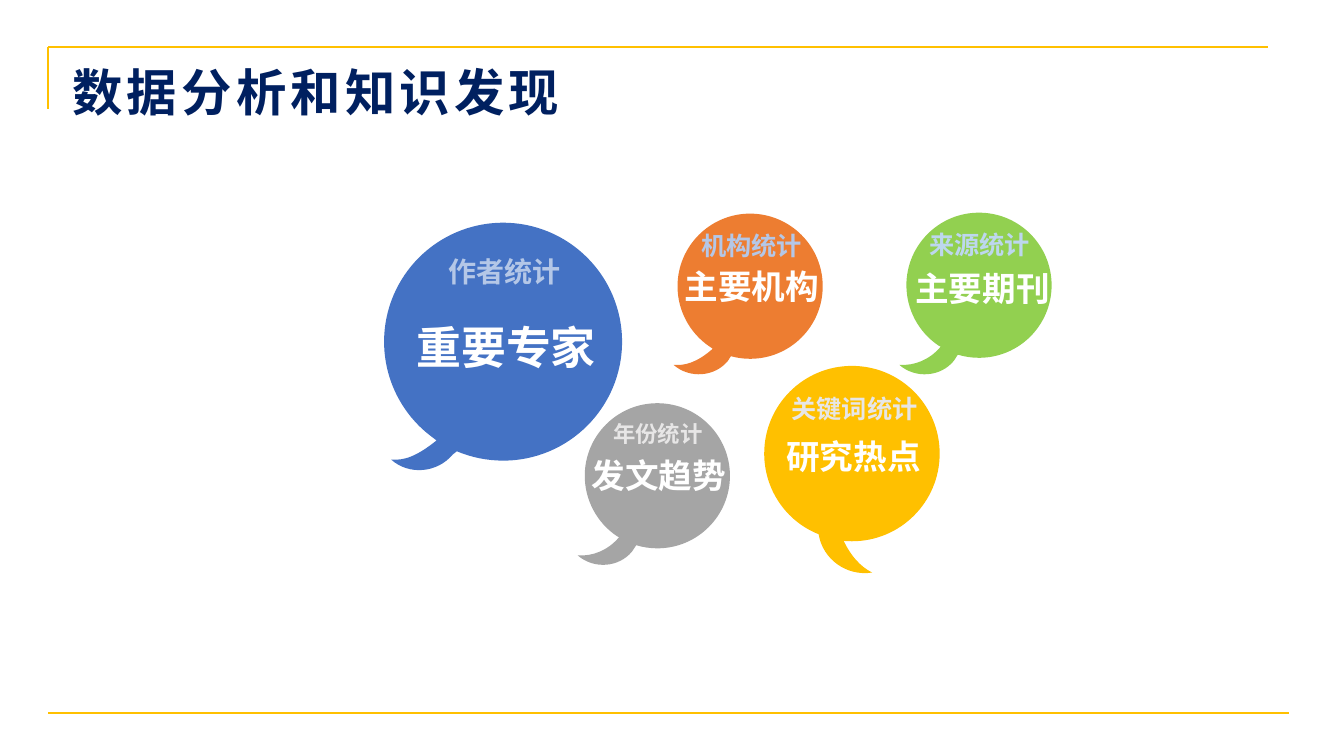
import math
import pptx
import pptx.dml.color
import pptx.enum.shapes
import pptx.enum.text
import pptx.oxml
import pptx.oxml.ns
import pptx.util
import lxml.etree

Inches = pptx.util.Inches
RGB = pptx.dml.color.RGBColor
ALIGN = pptx.enum.text.PP_ALIGN
qn = pptx.oxml.ns.qn

FONT = "Noto Sans CJK SC"
NAVY = RGB(0x00, 0x20, 0x60)
GOLD = RGB(0xFF, 0xC0, 0x00)
BLUE = RGB(0x44, 0x72, 0xC4)
ORANGE = RGB(0xED, 0x7D, 0x31)
GRAY = RGB(0xA5, 0xA5, 0xA5)
GREEN = RGB(0x92, 0xD0, 0x50)
WHITE = RGB(0xFF, 0xFF, 0xFF)
PALE = RGB(0xB4, 0xC7, 0xE7)
SKY = RGB(0xBD, 0xD7, 0xEE)
SILVER = RGB(0xE7, 0xE6, 0xE6)

# Tails, in inches from the circle's centre:
# root, then two curves that meet at the tip, then foot
BIG_TAIL = [(-.46, 1.09), (-.5, 1.12), (-.65, 1.3), (-.93, 1.33), (-1.11, 1.17),
            (-.98, 1.18), (-.86, 1.14), (-.66, .98), (-.75, .91)]
SHORT_TAIL = [(-.19, .69), (-.22, .74), (-.35, .9), (-.6, .92), (-.76, .78),
              (-.65, .79), (-.53, .76), (-.37, .62), (-.4, .6)]
LONG_TAIL = [(-.21, .69), (-.25, .75), (-.38, .91), (-.63, .93), (-.79, .79),
             (-.64, .8), (-.49, .74), (-.38, .61), (-.4, .6)]
RIGHT_TAIL = [(-.08, .86), (-.07, .89), (-.01, 1.01), (.08, 1.12), (.2, 1.18),
              (-.05, 1.22), (-.29, 1.05), (-.33, .8), (-.33, .8)]

# Centre x, centre y, radius, turn, tail, colour
BUBBLES = [
    (4.99, 3.39, 1.18, 40.2, BIG_TAIL, BLUE),
    (7.44, 2.84, .72, 40.2, SHORT_TAIL, ORANGE),
    (6.52, 4.72, .72, 40.2, LONG_TAIL, GRAY),
    (8.45, 4.5, .87, 350.5, RIGHT_TAIL, GOLD),
]
LAST = (9.71, 2.83, .72, 40.2, LONG_TAIL, GREEN)

# Text, left, top, width, height, size, colour, side inset, top inset
LABELS = [
    ("重要专家", 4.12, 3.17, 1.8, .54, 32, WHITE, 0, 0),
    ("发文趋势", 5.84, 4.51, 1.39, .4, 24, WHITE, 0, 0),
    ("主要机构", 6.76, 2.64, 1.39, .4, 24, WHITE, 0, 0),
    ("研究热点", 7.77, 4.32, 1.39, .4, 24, WHITE, 0, 0),
    ("作者统计", 4.04, 2.52, 1.93, .34, 20, PALE, 0, 0),
    ("年份统计", 5.81, 4.12, 1.43, .37, 16, SILVER, .1, .05),
    ("关键词统计", 7.69, 3.85, 1.57, .4, 18, SILVER, .1, .05),
    ("机构统计", 6.7, 2.24, 1.51, .4, 18, PALE, .1, .05),
]
LAST_LABELS = [
    ("主要期刊", 9.05, 2.66, 1.39, .4, 24, WHITE, 0, 0),
    ("来源统计", 9, 2.23, 1.43, .4, 18, SKY, .1, .05),
]


def add_rule(slide, x1, y1, x2, y2):
    rule = slide.shapes.add_connector(
        pptx.enum.shapes.MSO_CONNECTOR.STRAIGHT,
        Inches(x1), Inches(y1), Inches(x2), Inches(y2))
    rule.line.color.rgb = GOLD
    rule.line.width = pptx.util.Pt(1.5)
    lxml.etree.SubElement(rule._element.spPr, qn("a:effectLst"))


def add_label(slide, text, x, y, w, h, size, color, side, top,
              align=ALIGN.CENTER, space=None):
    box = slide.shapes.add_textbox(Inches(x), Inches(y), Inches(w), Inches(h))
    frame = box.text_frame
    frame.word_wrap = True
    frame.auto_size = pptx.enum.text.MSO_AUTO_SIZE.SHAPE_TO_FIT_TEXT
    frame.margin_left = frame.margin_right = Inches(side)
    frame.margin_top = frame.margin_bottom = Inches(top)
    frame.text = text
    para = frame.paragraphs[0]
    para.alignment = align
    font = para.runs[0].font
    font.name, font.size, font.bold = FONT, pptx.util.Pt(size), True
    font.color.rgb = color
    props = para.runs[0]._r.get_or_add_rPr()
    lxml.etree.SubElement(props, qn("a:ea")).set("typeface", FONT)
    if space:
        props.set("spc", str(space * 100))


def turn(point, angle):
    x, y = point
    rad = math.radians(angle)
    return (x * math.cos(rad) - y * math.sin(rad),
            x * math.sin(rad) + y * math.cos(rad))


def arc(radius, start, end):
    # One curve along the circle, between two angles in degrees
    reach = 4 / 3 * math.tan(math.radians(end - start) / 4)
    return [turn(point, angle) for point, angle in (
        ((radius, radius * reach), start),
        ((radius, -radius * reach), end),
        ((radius, 0), end))]


def trace(radius, tail):
    # Clockwise from the top: three points make a curve, one makes a line
    root, foot = (math.degrees(math.atan2(y, x))
                  for x, y in (tail[0], tail[-1]))
    return [[(0, -radius)], arc(radius, -90, 0), arc(radius, 0, 90),
            arc(radius, 90, root), tail[1:2], tail[2:5], tail[5:8],
            tail[8:], arc(radius, foot, 180), arc(radius, 180, 270)]


def add_bubble(slide, x, y, radius, angle, tail, color):
    # The box holds the circle and reaches down to the tip of the tail
    low = turn(tail[4], -angle)[1]
    mx, my = turn((0, (low - radius) / 2), angle)
    left, top = x + mx - radius, y + my - (low + radius) / 2
    build = slide.shapes.build_freeform(Inches(left), Inches(top))
    build.add_line_segments(
        [(Inches(left + 2 * radius), Inches(top + radius + low))])
    shape = build.convert_to_shape()

    # Curved outline, turned back before the shape is rotated
    route = shape._element.find(".//" + qn("a:path"))
    for child in list(route):
        route.remove(child)
    for i, part in enumerate(trace(radius, tail)):
        kind = "cubicBezTo" if len(part) == 3 else "lnTo" if i else "moveTo"
        step = lxml.etree.SubElement(route, qn("a:" + kind))
        for point in part:
            px, py = turn(point, -angle)
            spot = lxml.etree.SubElement(step, qn("a:pt"))
            spot.set("x", str(Inches(px + radius)))
            spot.set("y", str(Inches(py + radius)))
    lxml.etree.SubElement(route, qn("a:close"))

    shape.rotation = angle
    shape.shadow.inherit = False
    shape.fill.solid()
    shape.fill.fore_color.rgb = color
    shape.line.fill.background()


def main():
    deck = pptx.Presentation()
    deck.slide_width, deck.slide_height = Inches(13.33), Inches(7.5)
    slide = deck.slides.add_slide(deck.slide_layouts[6])

    # Frame lines and title
    add_rule(slide, .48, .47, 12.58, .47)
    add_rule(slide, .48, 7.07, 12.78, 7.07)
    add_rule(slide, .48, .47, .48, 1.08)
    add_label(slide, "数据分析和知识发现", .62, .56, 11.25, .71, 36, NAVY,
              .1, .05, ALIGN.LEFT, 3)

    # Speech bubbles and their words
    for bubble in BUBBLES:
        add_bubble(slide, *bubble)
    for label in LABELS:
        add_label(slide, *label)

    # Journal bubble, on top
    add_bubble(slide, *LAST)
    for label in LAST_LABELS:
        add_label(slide, *label)

    deck.save("out.pptx")


if __name__ == "__main__":
    main()
